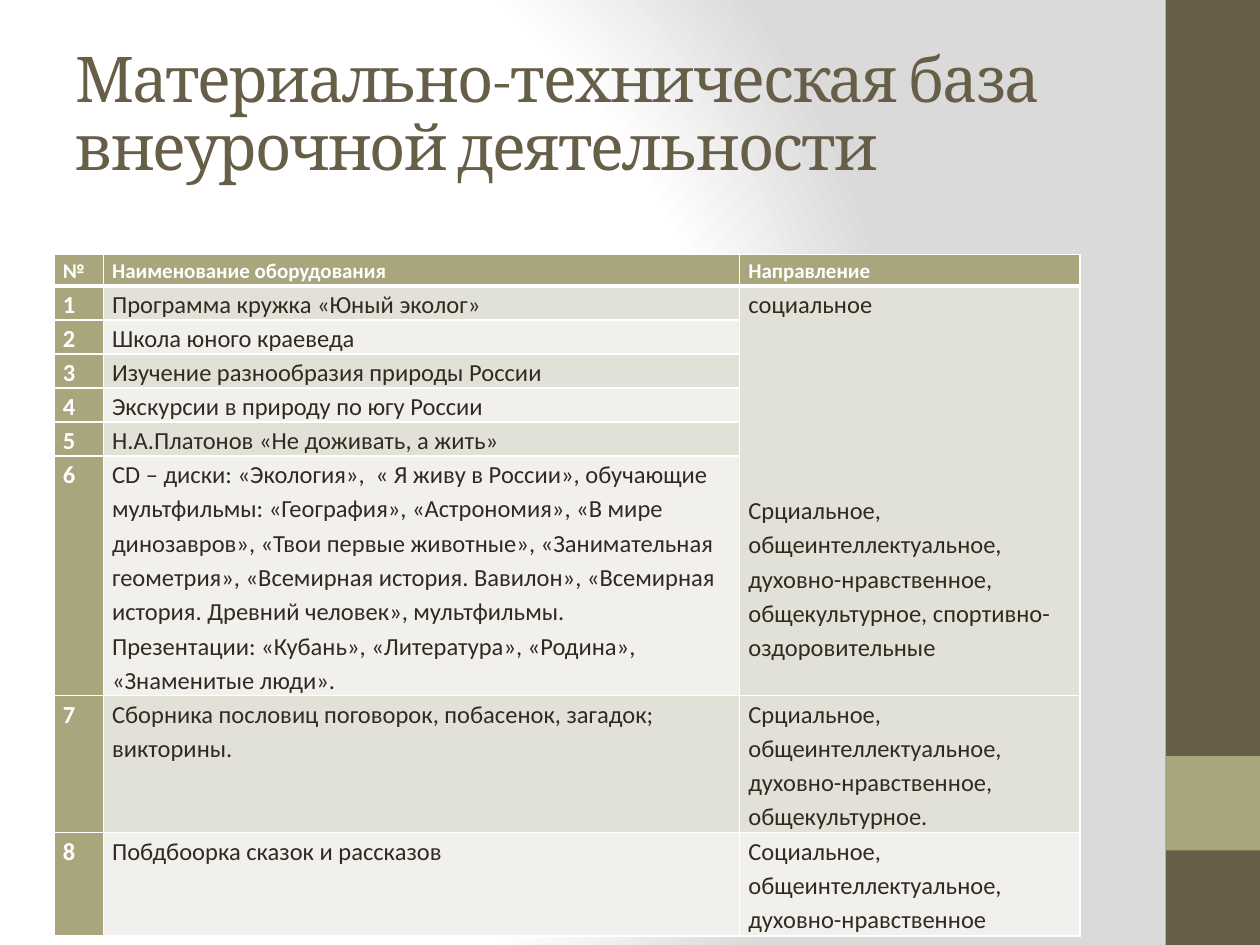
from lxml import etree
from pptx import Presentation
from pptx.dml.color import RGBColor
from pptx.enum import shapes, text
from pptx.oxml import parse_xml
from pptx.oxml.ns import nsdecls, qn
from pptx.util import Inches, Pt

WHITE, BROWN, OLIVE, INK = "FFFFFF", "675E47", "A9A57C", "2F2B20"
BANDS = ["E2E1D7", "F1F0EC"]
COLUMN_WIDTHS = [0.39, 5.05, 2.7]
ROW_HEIGHTS = [0.25] + [0.27] * 5 + [1.9, 1.09, 0.82]
HEADER = ["№", "Наименование оборудования", "Направление"]
EQUIPMENT = [
    ["Программа кружка «Юный эколог»"],
    ["Школа юного краеведа"],
    ["Изучение разнообразия природы России"],
    ["Экскурсии в природу по югу России"],
    ["Н.А.Платонов «Не доживать, а жить»"],
    ["CD – диски: «Экология»,  « Я живу в России», обучающие мультфильмы: "
     "«География», «Астрономия», «В мире динозавров», «Твои первые животные», "
     "«Занимательная геометрия», «Всемирная история. Вавилон», "
     "«Всемирная история. Древний человек», мультфильмы.",
     "Презентации: «Кубань», «Литература», «Родина», «Знаменитые люди»."],
    ["Сборника пословиц поговорок, побасенок, загадок; викторины."],
    ["Побдбоорка сказок и рассказов"],
]
DIRECTIONS = {
    1: ["социальное",
        "Срциальное, общеинтеллектуальное, духовно-нравственное, "
        "общекультурное, спортивно-оздоровительные"],
    7: ["Срциальное, общеинтеллектуальное, духовно-нравственное, общекультурное."],
    8: ["Социальное,  общеинтеллектуальное, духовно-нравственное"],
}


def color(value):
    return RGBColor.from_string(value)


def set_attributes(target, values):
    for name, value in values.items():
        setattr(target, name, value)


def set_background(slide):
    fill = slide.background.fill
    fill.solid()
    stops = "".join(
        f'<a:gs pos="{position * 1000}"><a:srgbClr val="{value}"/></a:gs>'
        for position, value in [(0, WHITE), (75, WHITE), (100, "DADADA")])
    gradient = parse_xml(
        f'<a:gradFill {nsdecls("a")} rotWithShape="1"><a:gsLst>{stops}</a:gsLst>'
        '<a:path path="circle"><a:fillToRect l="20000" t="50000" r="100000" b="50000"/>'
        '</a:path></a:gradFill>')
    properties = slide.background._cSld.find(".//" + qn("p:bgPr"))
    properties.replace(properties.find(qn("a:solidFill")), gradient)


def add_band(slide, top, height, fill):
    shape = slide.shapes.add_shape(
        shapes.MSO_SHAPE.RECTANGLE, Inches(9.25), Inches(top), Inches(0.75), Inches(height))
    shape.shadow.inherit = False
    shape.fill.solid()
    shape.fill.fore_color.rgb = color(fill)
    shape.line.fill.background()


def write(paragraph, content, spacing, ink, **font):
    paragraph.line_spacing = spacing
    run = paragraph.add_run()
    run.text = content
    set_attributes(run.font, font)
    run.font.color.rgb = color(ink)
    return run


def add_title(slide, content):
    box = slide.shapes.add_textbox(Inches(0.5), Inches(0.3), Inches(8.33), Inches(1.25))
    frame = box.text_frame
    set_attributes(frame, {"word_wrap": True, "vertical_anchor": text.MSO_ANCHOR.MIDDLE})
    run = write(frame.paragraphs[0], content, 0.9, BROWN, name="Cambria", size=Pt(36))
    run.font._element.set("spc", "-100")


def set_borders(cell, top, bottom):
    properties = cell._tc.get_or_add_tcPr()
    widths = {"lnL": 1, "lnR": 1, "lnT": top, "lnB": bottom}
    for index, (side, width) in enumerate(widths.items()):
        line = etree.Element(qn(f"a:{side}"), w=str(Pt(width)))
        fill = etree.SubElement(line, qn("a:solidFill"))
        etree.SubElement(fill, qn("a:srgbClr"), val=WHITE)
        properties.insert(index, line)


def fill_cell(cell, row, column, lines):
    accent = row == 0 or column == 0
    set_attributes(cell, {"margin_left": Inches(0.07), "margin_right": Inches(0.07),
                          "margin_top": 0, "margin_bottom": 0})
    cell.fill.solid()
    cell.fill.fore_color.rgb = color(OLIVE if accent else BANDS[(row - 1) % 2])
    set_borders(cell, 3 if row == 1 else 1, 3 if row == 0 else 1)
    frame = cell.text_frame
    for index, content in enumerate(lines):
        paragraph = frame.add_paragraph() if index else frame.paragraphs[0]
        write(paragraph, content, 1.15, WHITE if accent else INK, name="Calibri",
              size=Pt(14 if row else 12), bold=accent)


def add_equipment_table(slide):
    table = slide.shapes.add_table(
        len(ROW_HEIGHTS), len(COLUMN_WIDTHS), Inches(0.43), Inches(2.02),
        Inches(sum(COLUMN_WIDTHS)), Inches(sum(ROW_HEIGHTS))).table
    for column, width in zip(table.columns, COLUMN_WIDTHS):
        column.width = Inches(width)
    for row, height in zip(table.rows, ROW_HEIGHTS):
        row.height = Inches(height)
    table.cell(1, 2).merge(table.cell(6, 2))
    rows = [[[label] for label in HEADER]]
    rows += [[[str(number)], names, DIRECTIONS.get(number, [])]
             for number, names in enumerate(EQUIPMENT, 1)]
    for row, contents in enumerate(rows):
        for column, lines in enumerate(contents):
            fill_cell(table.cell(row, column), row, column, lines)
    table.cell(1, 2).text_frame.paragraphs[1].space_before = Pt(98)


def main():
    presentation = Presentation()
    set_attributes(presentation, {"slide_width": Inches(10), "slide_height": Inches(7.5)})
    slide = presentation.slides.add_slide(presentation.slide_layouts[6])
    set_background(slide)
    add_band(slide, 0, 7.5, BROWN)
    add_band(slide, 6, 0.75, OLIVE)
    add_title(slide, "Материально-техническая база внеурочной деятельности")
    add_equipment_table(slide)
    presentation.save("out.pptx")


if __name__ == "__main__":
    main()
